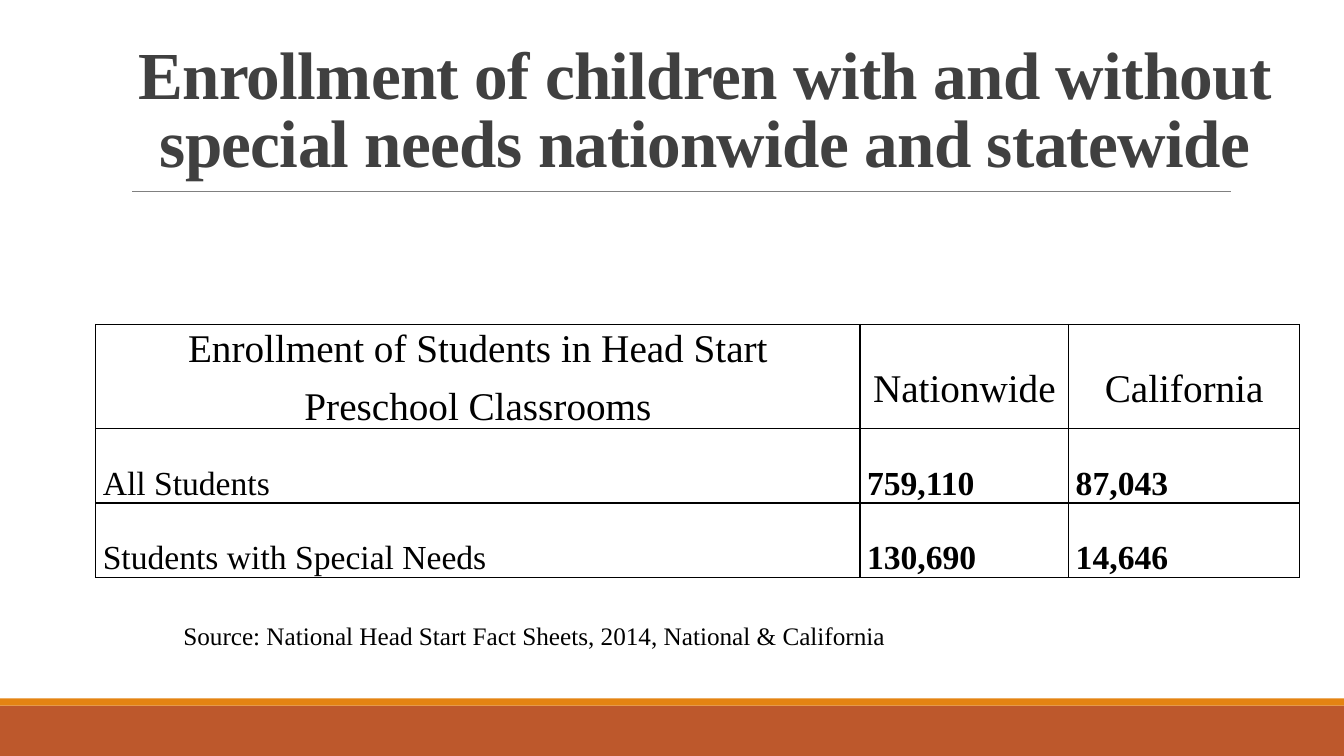
from lxml import etree
from pptx import Presentation
from pptx.dml.color import RGBColor
from pptx.enum.shapes import MSO_CONNECTOR, MSO_SHAPE
from pptx.enum.text import MSO_ANCHOR, MSO_AUTO_SIZE, PP_ALIGN
from pptx.oxml import parse_xml
from pptx.oxml.ns import nsdecls, qn
from pptx.util import Inches, Pt

RUST = RGBColor(0xBD, 0x58, 0x2C)
ORANGE = RGBColor(0xE4, 0x83, 0x12)
GRAY = RGBColor(0x80, 0x80, 0x80)
CHARCOAL = RGBColor(0x40, 0x40, 0x40)
BLACK = RGBColor(0, 0, 0)
FONT = "Times New Roman"
LEFT, CENTER = PP_ALIGN.LEFT, PP_ALIGN.CENTER
RECTANGLE = MSO_SHAPE.RECTANGLE
STRAIGHT = MSO_CONNECTOR.STRAIGHT
TOP, MIDDLE, BOTTOM = MSO_ANCHOR.TOP, MSO_ANCHOR.MIDDLE, MSO_ANCHOR.BOTTOM
NO_AUTOFIT = MSO_AUTO_SIZE.NONE


def write_text(frame, text, size, color=BLACK, bold=False, align=LEFT, line_spacing=1.0, space_after=0):
    frame.text = text
    for paragraph in frame.paragraphs:
        paragraph.alignment = align
        paragraph.line_spacing = line_spacing
        paragraph.space_before = Pt(0)
        paragraph.space_after = Pt(space_after)
        for run in paragraph.runs:
            run.font.name = FONT
            run.font.size = Pt(size)
            run.font.bold = bold
            run.font.color.rgb = color


presentation = Presentation()
presentation.slide_width = Inches(13.33)
presentation.slide_height = Inches(7.5)
slide = presentation.slides.add_slide(presentation.slide_layouts[5])

for top, height, color in [(7, 0.5, RUST), (6.93, 0.07, ORANGE)]:
    bar = slide.shapes.add_shape(RECTANGLE, 0, Inches(top), presentation.slide_width, Inches(height))
    bar.shadow.inherit = False
    bar.fill.solid()
    bar.fill.fore_color.rgb = color
    bar.line.fill.background()

rule = slide.shapes.add_connector(STRAIGHT, Inches(1.31), Inches(1.9), Inches(12.21), Inches(1.9))
rule.line.color.rgb = GRAY
rule.line.width = Pt(0.5)
etree.SubElement(rule._element.spPr, qn("a:effectLst"))

title = slide.shapes.title
title.left, title.top, title.width, title.height = map(Inches, (0.92, 0.4, 12.14, 1.45))
title.text_frame.auto_size = NO_AUTOFIT
title.text_frame.vertical_anchor = BOTTOM
write_text(
    title.text_frame,
    "Enrollment of children with and without special needs nationwide and statewide",
    48, color=CHARCOAL, bold=True, align=CENTER, line_spacing=0.85,
)
title.text_frame.paragraphs[0].runs[0].font._element.set("spc", "-50")

rows = [
    ("Enrollment of Students in Head Start\nPreschool Classrooms", "Nationwide", "California"),
    ("All Students", "759,110", "87,043"),
    ("Students with Special Needs", "130,690", "14,646"),
]
column_widths = [7.58, 2.07, 2.29]
row_heights = [1.03, 0.73, 0.73]
table = slide.shapes.add_table(
    len(rows), len(column_widths), Inches(0.95), Inches(3.22),
    Inches(sum(column_widths)), Inches(sum(row_heights)),
).table
table.first_row = False
table.horz_banding = False
for column, width in zip(table.columns, column_widths):
    column.width = Inches(width)
for row, height in zip(table.rows, row_heights):
    row.height = Inches(height)

for row_index, row in enumerate(rows):
    for column_index, text in enumerate(row):
        cell = table.cell(row_index, column_index)
        is_header = row_index == 0
        cell.margin_left = cell.margin_right = Inches(0.07)
        cell.margin_top = cell.margin_bottom = 0
        cell.vertical_anchor = TOP
        write_text(
            cell.text_frame, text, 28 if is_header else 24,
            bold=not is_header and column_index > 0,
            align=CENTER if is_header else LEFT,
            line_spacing=1.07 if is_header and column_index == 0 else 2.0,
            space_after=8,
        )
        properties = cell._tc.get_or_add_tcPr()
        for side in ("lnL", "lnR", "lnT", "lnB"):
            properties.append(parse_xml(
                f'<a:{side} {nsdecls("a")} w="{Pt(1)}"><a:solidFill>'
                f'<a:srgbClr val="{BLACK}"/></a:solidFill></a:{side}>'
            ))
        cell.fill.background()

source = slide.shapes.add_textbox(Inches(1.72), Inches(6.1), Inches(8.96), Inches(0.4))
source.text_frame.word_wrap = True
source.text_frame.vertical_anchor = MIDDLE
write_text(source.text_frame, "Source: National Head Start Fact Sheets, 2014, National & California", 18)

presentation.save("out.pptx")
